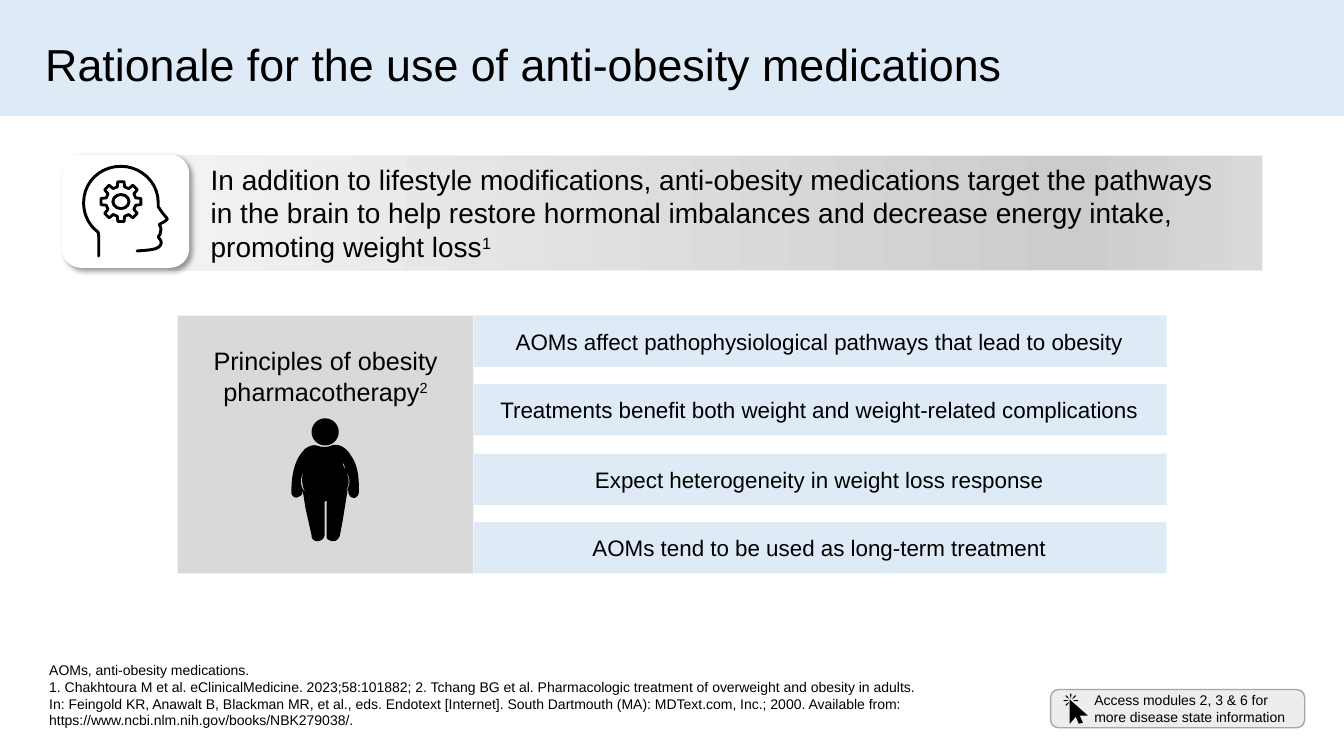
from copy import deepcopy
from math import cos, pi, sin

from lxml.etree import SubElement
from pptx import Presentation
from pptx.dml.color import RGBColor
from pptx.enum.shapes import MSO_SHAPE
from pptx.enum.text import MSO_ANCHOR, PP_ALIGN
from pptx.oxml.ns import qn
from pptx.util import Pt

PX = 9144  # 100 px to the inch
W, H = 1333, 750
COLORS = {"band": "DEEBF7", "panel": "D9D9D9", "mid": "CCCCCC", "pale": "F2F2F2",
          "button": "EDEDED", "edge": "A6A6A6", "white": "FFFFFF", "ink": "000000"}

TITLE = "Rationale for the use of anti-obesity medications"
# A run is (text, superscript); each inner list is one line
INTRO = [[("In addition to lifestyle modifications, anti-obesity medications target the pathways ", False)],
         [("in the brain to help restore hormonal imbalances and decrease energy intake, "
           "promoting weight loss", False), ("1", True)]]
HEADING = [[("Principles of obesity pharmacotherapy", False), ("2", True)]]
PRINCIPLES = ["AOMs affect pathophysiological pathways that lead to obesity",
              "Treatments benefit both weight and weight-related complications",
              "Expect heterogeneity in weight loss response",
              "AOMs tend to be used as long-term treatment"]
BUTTON = ["Access modules 2, 3 & 6 for ", "more disease state information"]
FOOTNOTE = ["AOMs, anti-obesity medications.",
            "1. Chakhtoura M et al. eClinicalMedicine. 2023;58:101882; 2. Tchang BG et al. "
            "Pharmacologic treatment of overweight and obesity in adults. In: Feingold KR, "
            "Anawalt B, Blackman MR, et al., eds. Endotext [Internet]. South Dartmouth (MA): "
            "MDText.com, Inc.; 2000. Available from: https://www.ncbi.nlm.nih.gov/books/NBK279038/."]

# Outlines: a pair is a corner, six numbers are a cubic curve
HEAD = [(98, 254), (98, 236), (98, 231, 97, 230, 97, 230), (88, 223, 83, 213, 83, 201),
        (83, 181, 99, 165, 120, 165), (140, 165, 157, 181, 157, 201), (157, 205),
        (161, 211), (166, 217), (165, 220, 158, 222, 158, 223), (161, 227, 159, 229, 159, 232),
        (157, 235), (159, 238, 160, 239, 160, 241), (159, 248, 148, 248, 136, 249)]
BODY = [(324, 497), (322, 497, 322, 498, 322, 499), (322, 530), (322, 535, 318, 537, 314, 537),
        (311, 536, 309, 535, 309, 531), (303, 504), (300, 485), (300, 489),
        (300, 491, 298, 492, 296, 493), (293, 495, 289, 492, 289, 489),
        (289, 478, 290, 468, 294, 458), (296, 453, 299, 449, 303, 445),
        (306, 443, 310, 441, 314, 442), (320, 444, 324, 444, 329, 442),
        (331, 441, 334, 441, 337, 442), (342, 444, 346, 448, 348, 452),
        (352, 457, 354, 464, 355, 470), (356, 476, 356, 482, 356, 488),
        (356, 491, 354, 493, 352, 494), (349, 494, 347, 493, 346, 490),
        (345, 489, 346, 487, 345, 485), (344, 491), (340, 516), (337, 532),
        (336, 533, 336, 534, 335, 535), (332, 538, 328, 537, 325, 535),
        (324, 534, 324, 533, 324, 531), (324, 497)]
ARM_GAPS = [[(342, 488), (348, 484, 348, 473, 343, 468), (347, 475, 347, 482, 342, 488)],
            [(303, 488), (301, 485, 300, 482, 300, 479), (299, 475, 300, 472, 301, 468),
             (298, 473, 297, 484, 303, 488)],
            [(343, 467), (341, 460), (340, 460), (341, 463), (343, 467)],
            [(305, 460), (302, 466), (304, 463), (305, 460)]]
POINTER = [(1061, 694), (1079, 710), (1071, 710), (1074, 717), (1070, 718), (1067, 711),
           (1061, 718), (1061, 694)]
CLICK_CENTER, CLICK_ANGLES = (1062, 695), (-90, -135, 180, 135, 0, -45)
GEAR_CENTER, GEAR_TEETH = (120, 200), 8


def rgb(name):
    return RGBColor.from_string(COLORS[name])


def finish(s, fill=None, line=None, width=1):
    s.shadow.inherit = False
    if fill:
        s.fill.solid()
        s.fill.fore_color.rgb = rgb(fill)
    else:
        s.fill.background()
    if line:
        s.line.color.rgb = rgb(line)
        s.line.width = Pt(width)
    else:
        s.line.fill.background()
    return s


def box(kind, at, *style):
    return finish(sp.add_shape(kind, *(v * PX for v in at)), *style)


def write(s, lines, size, align=PP_ALIGN.LEFT, anchor=MSO_ANCHOR.MIDDLE, left=10, spacing=None):
    tf = s.text_frame
    frame = {"word_wrap": True, "vertical_anchor": anchor, "margin_left": left * PX,
             "margin_right": 10 * PX, "margin_top": 5 * PX, "margin_bottom": 5 * PX}
    for key, value in frame.items():
        setattr(tf, key, value)
    p = tf.paragraphs[0]
    p.alignment, p.line_spacing = align, spacing
    for i, line in enumerate(lines):
        if i:
            p.add_line_break()
        for text, raised in [(line, False)] if isinstance(line, str) else line:
            r = p.add_run()
            r.text = text
            for key, value in {"size": Pt(size), "name": "Arial"}.items():
                setattr(r.font, key, value)
            r.font.color.rgb = rgb("ink")
            if raised:
                r.font._element.set("baseline", "30000")


def text_box(at, *args, **kwargs):
    write(sp.add_textbox(*(v * PX for v in at)), *args, **kwargs)


def flatten(path, steps=10):
    """Turn corners and cubic curves into a list of points."""
    points = [path[0]]
    for seg in path[1:]:
        if len(seg) == 2:
            points.append(seg)
            continue
        ctrl = [points[-1], seg[:2], seg[2:4], seg[4:]]
        for t in (k / steps for k in range(1, steps + 1)):
            weights = ((1 - t) ** 3, 3 * t * (1 - t) ** 2, 3 * t * t * (1 - t), t ** 3)
            points.append(tuple(sum(w * c[a] for w, c in zip(weights, ctrl)) for a in (0, 1)))
    return points


def outline(paths, *style, closed=True):
    contours = [[(x * PX, y * PX) for x, y in flatten(path)] for path in paths]
    builder = sp.build_freeform(*contours[0][0])
    for i, points in enumerate(contours):
        if i:
            builder.move_to(*points[0])
        builder.add_line_segments(points[1:], close=closed)
    return finish(builder.convert_to_shape(), *style)


def polar(center, radius, degrees):
    a = degrees * pi / 180
    return center[0] + radius * cos(a), center[1] + radius * sin(a)


def draw_intro():
    s = box(MSO_SHAPE.RECTANGLE, (166, 154, 1086, 114), "panel", "pale", 0.75)
    s.fill.gradient()
    s.fill.gradient_angle = 180
    stops = s._element.spPr.find(".//" + qn("a:gsLst"))
    stops.append(deepcopy(stops[0]))
    for stop, (pos, color) in zip(s.fill.gradient_stops, [(0, "panel"), (0.17, "mid"), (1, "pale")]):
        stop.position, stop.color.rgb = pos, rgb(color)
    write(s, INTRO, 20, left=43)

    card = box(MSO_SHAPE.ROUNDED_RECTANGLE, (62, 154, 125, 111), "white", "white")
    effects = card._element.spPr.find(qn("a:effectLst"))
    shadow = SubElement(effects, qn("a:outerShdw"), blurRad=str(Pt(4)), dist=str(Pt(3)),
                        dir="2700000", algn="tl", rotWithShape="0")
    color = SubElement(shadow, qn("a:srgbClr"), val=COLORS["ink"])
    SubElement(color, qn("a:alpha"), val="40000")


def draw_head():
    head = outline([HEAD], None, "ink", 2.1, closed=False)
    head._element.spPr.find(qn("a:ln")).set("cap", "rnd")
    step = 360 / GEAR_TEETH
    tooth = [(15, -14), (20, -9), (20, 9), (15, 14)]
    gear = [polar(GEAR_CENTER, radius, n * step + turn)
            for n in range(GEAR_TEETH) for radius, turn in tooth]
    outline([gear + gear[:1]], None, "ink", 2)
    x, y = GEAR_CENTER
    box(MSO_SHAPE.OVAL, (x - 8, y - 7, 16, 14), None, "ink", 2.1)


def draw_click():
    for angle in CLICK_ANGLES:
        ray = [polar(CLICK_CENTER, r, angle + turn)
               for r, turn in [(2, 0), (5, 7), (7, 4), (7, -4), (5, -7), (2, 0)]]
        outline([ray], "ink")
    outline([POINTER], "ink")


prs = Presentation()
prs.slide_width, prs.slide_height = W * PX, H * PX
sp = prs.slides.add_slide(prs.slide_layouts[6]).shapes

box(MSO_SHAPE.RECTANGLE, (0, 0, W, 115), "band")
text_box((35, 29, 1277, 75), [TITLE], 32, spacing=0.9)
draw_intro()
draw_head()

BAR_TOP, BAR_PITCH, BAR_H = 313, 68.4, 51
for n, principle in enumerate(PRINCIPLES):
    bar = box(MSO_SHAPE.RECTANGLE, (468, round(BAR_TOP + n * BAR_PITCH), 689, BAR_H), "band")
    write(bar, [principle], 16, PP_ALIGN.CENTER)
box(MSO_SHAPE.RECTANGLE, (176, BAR_TOP, 294, 256), "panel", "pale", 0.75)
text_box((176, 338, 294, 71), HEADING, 18, PP_ALIGN.CENTER, MSO_ANCHOR.TOP)
outline([BODY, *ARM_GAPS], "ink")
box(MSO_SHAPE.OVAL, (309, 415, 27, 27), "ink")

button = box(MSO_SHAPE.ROUNDED_RECTANGLE, (1042, 684, 252, 38), "button", "edge")
button.adjustments[0] = 0.21
write(button, BUTTON, 10, left=41)
draw_click()
text_box((39, 651, 890, 77), FOOTNOTE, 10, anchor=MSO_ANCHOR.BOTTOM)

prs.save("out.pptx")
